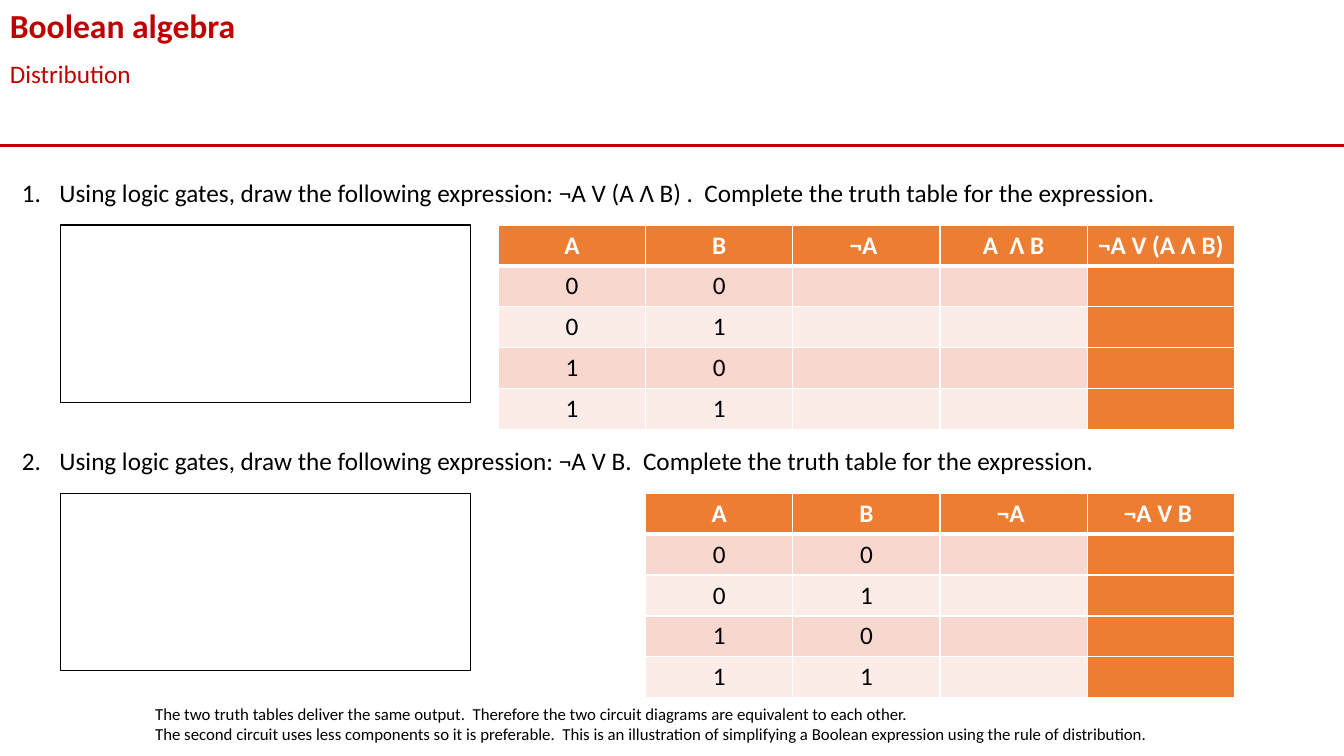
from dataclasses import dataclass

from lxml import etree
from pptx import Presentation
from pptx.dml.color import RGBColor
from pptx.enum import shapes, text
from pptx.oxml import ns
from pptx.util import Cm, Pt

RED = RGBColor(0xC0, 0x00, 0x00)
BLACK = RGBColor(0x00, 0x00, 0x00)
WHITE = RGBColor(0xFF, 0xFF, 0xFF)
ORANGE = RGBColor(0xED, 0x7D, 0x31)
BANDS = (RGBColor(0xF8, 0xD7, 0xCE), RGBColor(0xFC, 0xEC, 0xE8))

SLIDE_WIDTH, SLIDE_HEIGHT = 33.87, 19.05
COLUMN_WIDTH, ROW_HEIGHT = 3.71, 1.03
TABLE_RIGHT = 31.11
INPUTS = ("00", "01", "10", "11")


@dataclass(frozen=True)
class TextBlock:
    lines: tuple[str, ...]
    left: float
    top: float
    width: float
    height: float
    size: int
    color: RGBColor = BLACK
    bold: bool = False
    wrap: bool = True
    number: int | None = None


@dataclass(frozen=True)
class Exercise:
    number: int
    expression: str
    top: float
    headings: tuple[str, ...]


HEADINGS = (
    TextBlock(("Distribution",), 0, 1.35, SLIDE_WIDTH, 1.03, 18, RED),
    TextBlock(("Boolean algebra",), 0, 0, SLIDE_WIDTH, 1.28, 24, RED, bold=True),
)
EXERCISES = (
    Exercise(1, "¬A V (A Ʌ B) ", 4.34, ("A", "B", "¬A ", "A  Ʌ B", "¬A V (A Ʌ B) ")),
    Exercise(2, "¬A V B", 11.1, ("A", "B", "¬A ", "¬A V B ")),
)
CONCLUSION = TextBlock(
    (
        "The two truth tables deliver the same output.  Therefore the two circuit "
        "diagrams are equivalent to each other.",
        "The second circuit uses less components so it is preferable.  This is an "
        "illustration of simplifying a Boolean expression using the rule of distribution.",
    ),
    3.66, 17.6, 25.81, 1.28, 12, wrap=False,
)


def style_font(paragraph, size: int, color: RGBColor, bold: bool) -> None:
    font = paragraph.font
    font.name, font.size, font.bold = "Calibri", Pt(size), bold
    font.color.rgb = color


def number_paragraph(paragraph, start: int) -> None:
    properties = paragraph._p.get_or_add_pPr()
    indent = Cm(0.95)
    properties.set("marL", str(indent))
    properties.set("indent", str(-indent))
    etree.SubElement(properties, ns.qn("a:buFont"), typeface="+mj-lt")
    etree.SubElement(properties, ns.qn("a:buAutoNum"), type="arabicPeriod", startAt=str(start))


def add_text(slide, block: TextBlock) -> None:
    box = slide.shapes.add_textbox(
        Cm(block.left), Cm(block.top), Cm(block.width), Cm(block.height)
    )
    frame = box.text_frame
    frame.word_wrap = block.wrap
    frame.auto_size = text.MSO_AUTO_SIZE.SHAPE_TO_FIT_TEXT
    frame.text = "\n".join(block.lines)
    for paragraph in frame.paragraphs:
        if block.number is not None:
            number_paragraph(paragraph, block.number)
        style_font(paragraph, block.size, block.color, block.bold)


def add_divider(slide) -> None:
    divider = slide.shapes.add_connector(
        shapes.MSO_CONNECTOR.STRAIGHT, 0, Cm(3.66), Cm(SLIDE_WIDTH), Cm(3.66)
    )
    divider.line.color.rgb = RED
    divider.line.width = Pt(2.25)
    etree.SubElement(divider._element.spPr, ns.qn("a:effectLst"))


def add_circuit_frame(slide, top: float) -> None:
    """Empty box in which the logic gates are drawn."""
    frame = slide.shapes.add_shape(
        shapes.MSO_SHAPE.RECTANGLE, Cm(1.52), Cm(top), Cm(10.34), Cm(4.47)
    )
    frame.shadow.inherit = False
    frame.fill.background()
    frame.line.color.rgb = BLACK
    frame.line.width = Pt(1)


def set_borders(cell, row: int) -> None:
    """White borders, thicker between the heading and the first input row."""
    widths = {"L": 1, "R": 1, "T": 3 if row == 1 else 1, "B": 3 if row == 0 else 1}
    properties = cell._tc.get_or_add_tcPr()
    for side, width in widths.items():
        border = etree.SubElement(properties, ns.qn(f"a:ln{side}"), w=str(Pt(width)))
        fill = etree.SubElement(border, ns.qn("a:solidFill"))
        etree.SubElement(fill, ns.qn("a:srgbClr"), val=str(WHITE))


def add_truth_table(slide, headings: tuple[str, ...], top: float) -> None:
    columns = len(headings)
    rows = (headings, *(tuple(bits) + ("",) * (columns - 2) for bits in INPUTS))
    width = columns * COLUMN_WIDTH
    table = slide.shapes.add_table(
        len(rows), columns, Cm(TABLE_RIGHT - width), Cm(top),
        Cm(width), Cm(len(rows) * ROW_HEIGHT),
    ).table
    for column in table.columns:
        column.width = Cm(COLUMN_WIDTH)
    for r, values in enumerate(rows):
        table.rows[r].height = Cm(ROW_HEIGHT)
        is_heading = r == 0
        for c, value in enumerate(values):
            cell = table.cell(r, c)
            set_borders(cell, r)
            cell.fill.solid()
            is_result = c == columns - 1
            cell.fill.fore_color.rgb = ORANGE if is_heading or is_result else BANDS[(r - 1) % 2]
            cell.text = value
            paragraph = cell.text_frame.paragraphs[0]
            paragraph.alignment = text.PP_ALIGN.CENTER
            style_font(paragraph, 18, WHITE if is_heading else BLACK, is_heading)


def add_exercise(slide, exercise: Exercise) -> None:
    question = (
        f"Using logic gates, draw the following expression: {exercise.expression}.  "
        "Complete the truth table for the expression."
    )
    add_text(slide, TextBlock((question,), 0.3, exercise.top, 33.2, 1.03, 18,
                              number=exercise.number))
    answer_top = exercise.top + 1.33
    add_circuit_frame(slide, answer_top)
    add_truth_table(slide, exercise.headings, answer_top)


def main() -> None:
    presentation = Presentation()
    presentation.slide_width = Cm(SLIDE_WIDTH)
    presentation.slide_height = Cm(SLIDE_HEIGHT)
    slide = presentation.slides.add_slide(presentation.slide_layouts[6])
    add_divider(slide)
    for heading in HEADINGS:
        add_text(slide, heading)
    for exercise in EXERCISES:
        add_exercise(slide, exercise)
    add_text(slide, CONCLUSION)
    presentation.save("out.pptx")


if __name__ == "__main__":
    main()
